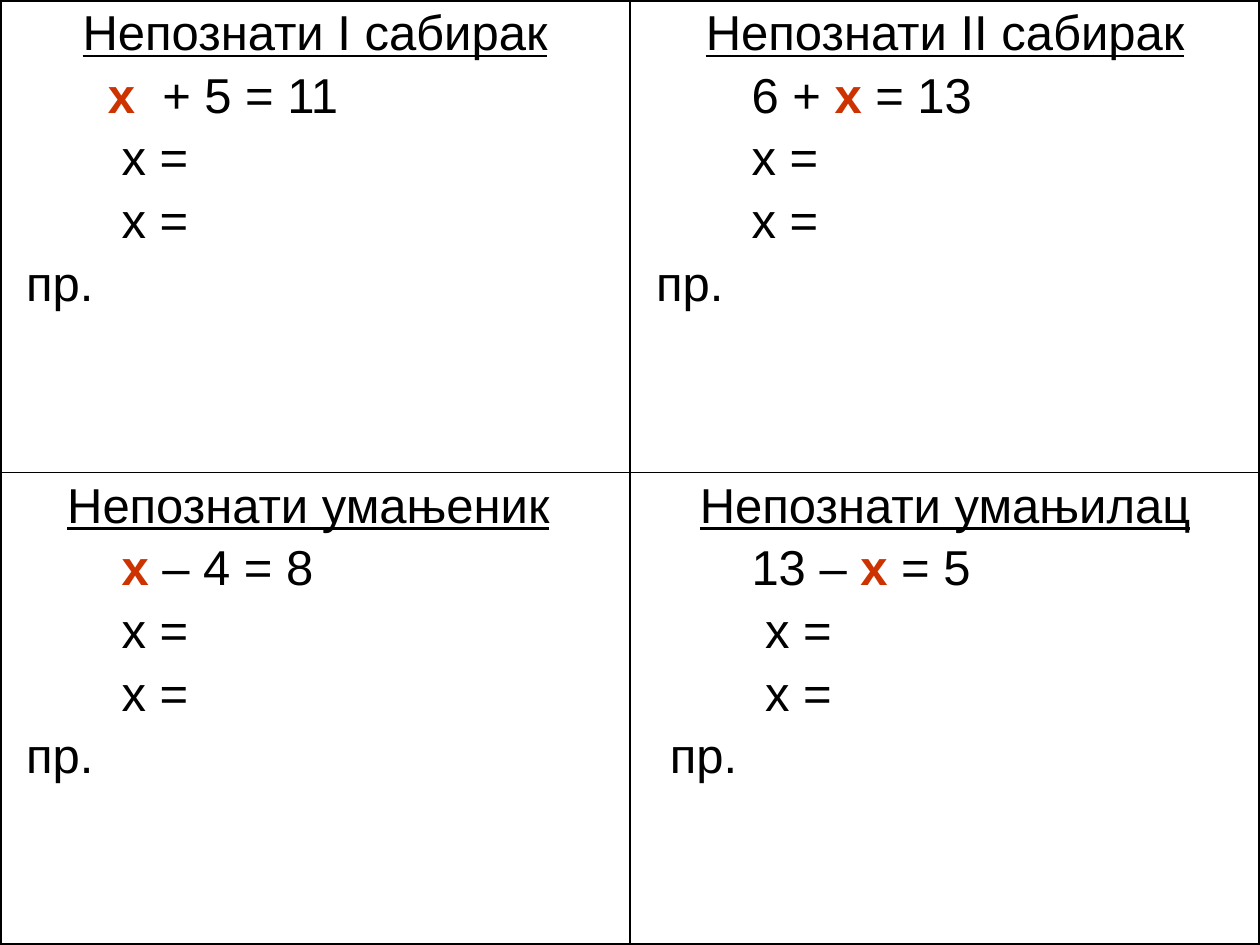
import lxml.etree
import pptx
import pptx.dml.color
import pptx.enum.text
import pptx.oxml.ns
import pptx.util

BLACK = pptx.dml.color.RGBColor(0x00, 0x00, 0x00)
WHITE = pptx.dml.color.RGBColor(0xFF, 0xFF, 0xFF)
RED = pptx.dml.color.RGBColor(0xCC, 0x33, 0x00)

INDENT_STEP = 7.78
UNKNOWN = "x"

EXERCISES = [
    [
        ("Непознати I сабирак", "x  + 5 = 11", (7, 8, 1)),
        ("Непознати II сабирак", "6 + x = 13", (8, 8, 1)),
    ],
    [
        ("Непознати умањеник ", "x – 4 = 8", (8, 8, 1)),
        ("Непознати умањилац", "13 – x = 5", (8, 9, 2)),
    ],
]


class Worksheet:
    font = "Arial"
    size = pptx.util.Pt(28)
    gap = pptx.util.Pt(4.6)
    outer = pptx.util.Pt(2.25)
    inner = pptx.util.Pt(1)

    def __init__(self, deck):
        self.deck = deck
        self.page = deck.slides.add_slide(deck.slide_layouts[6])

    def grid(self, rows, columns):
        width, height = self.deck.slide_width, self.deck.slide_height
        frame = self.page.shapes.add_table(rows, columns, 0, 0, width, height)
        table = frame.table
        table.first_row = False
        table.horz_banding = False
        for row in range(rows):
            for column in range(columns):
                cell = table.cell(row, column)
                edges = {
                    "L": column == 0,
                    "R": column == columns - 1,
                    "T": row == 0,
                    "B": row == rows - 1,
                }
                for side, is_outer in edges.items():
                    self.border(cell, side, self.outer if is_outer else self.inner)
                cell.fill.solid()
                cell.fill.fore_color.rgb = WHITE
        return table

    def border(self, cell, side, width):
        name = pptx.oxml.ns.qn
        properties = cell._tc.get_or_add_tcPr()
        line = lxml.etree.SubElement(properties, name(f"a:ln{side}"), w=str(int(width)))
        fill = lxml.etree.SubElement(line, name("a:solidFill"))
        lxml.etree.SubElement(fill, name("a:srgbClr"), val=str(BLACK))

    def paragraph(self, frame, first=False, indent=0):
        para = frame.paragraphs[0] if first else frame.add_paragraph()
        para.space_before = self.gap
        para.font.name = self.font
        para.font.size = self.size
        para.font.color.rgb = BLACK
        if indent:
            margin = pptx.util.Pt(indent * INDENT_STEP)
            para._p.get_or_add_pPr().set("marL", str(int(margin)))
        return para

    def span(self, para, text):
        span = para.add_run()
        span.text = text
        return span

    def heading(self, frame, text):
        para = self.paragraph(frame, first=True)
        para.alignment = pptx.enum.text.PP_ALIGN.CENTER
        title = text.rstrip()
        self.span(para, title).font.underline = True
        if title != text:
            self.span(para, text[len(title):])

    def equation(self, frame, text, indent):
        para = self.paragraph(frame, indent=indent)
        before, unknown, after = text.partition(UNKNOWN)
        if before:
            self.span(para, before)
        mark = self.span(para, unknown)
        mark.font.bold = True
        mark.font.color.rgb = RED
        self.span(para, after)

    def line(self, frame, text, indent):
        self.span(self.paragraph(frame, indent=indent), text)

    def exercise(self, cell, title, equation, indents):
        frame = cell.text_frame
        equation_indent, answer_indent, check_indent = indents
        self.heading(frame, title)
        self.equation(frame, equation, equation_indent)
        for _ in range(2):
            self.line(frame, "x =", answer_indent)
        self.line(frame, "пр.", check_indent)


def main():
    deck = pptx.Presentation()
    deck.slide_width = pptx.util.Inches(10)
    deck.slide_height = pptx.util.Inches(7.5)
    sheet = Worksheet(deck)
    table = sheet.grid(len(EXERCISES), len(EXERCISES[0]))
    for row, exercises in enumerate(EXERCISES):
        for column, exercise in enumerate(exercises):
            sheet.exercise(table.cell(row, column), *exercise)
    deck.save("out.pptx")


if __name__ == "__main__":
    main()
